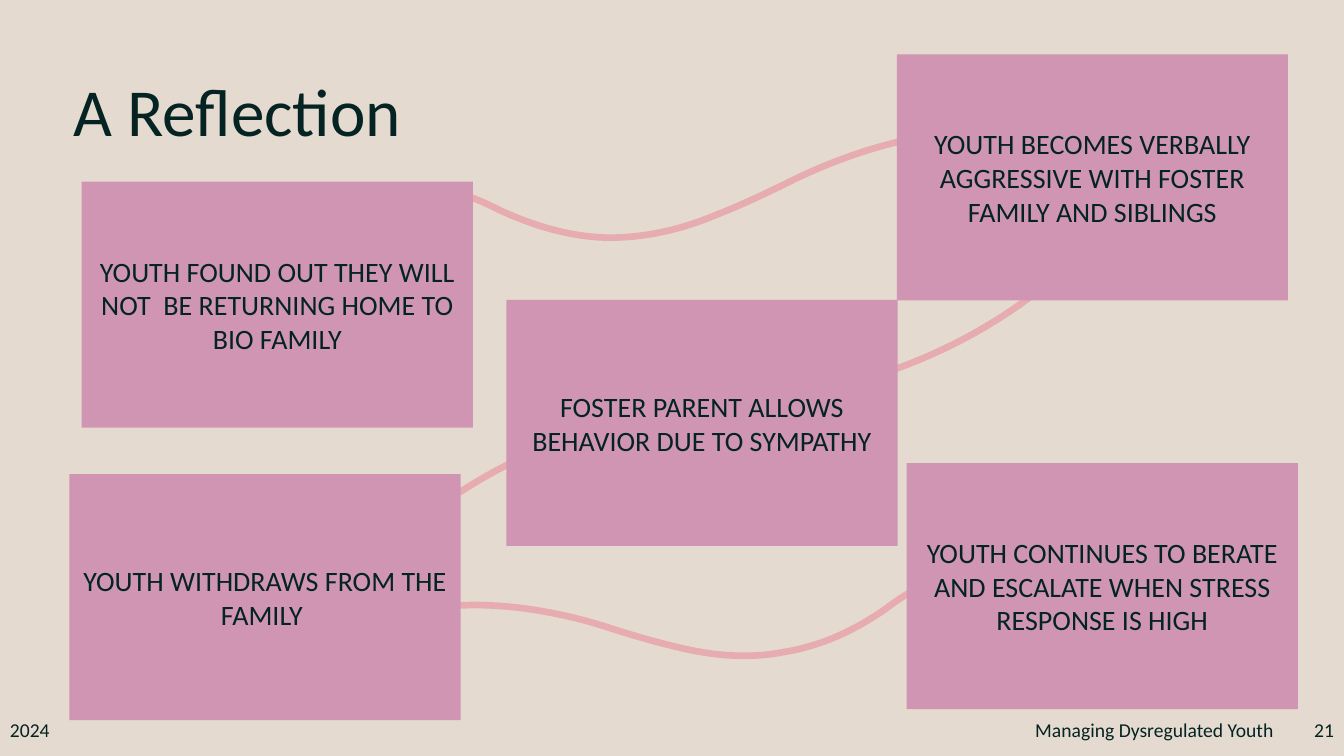
from lxml.etree import SubElement
from pptx import Presentation
from pptx.dml.color import RGBColor
from pptx.enum.shapes import MSO_SHAPE
from pptx.enum.text import MSO_ANCHOR, PP_ALIGN
from pptx.oxml.ns import qn
from pptx.util import Cm, Pt

SAND, PINK, MAUVE, INK = "E5DACF", "E7ACAF", "CF95B2", "042322"
SLIDE_WIDTH, SLIDE_HEIGHT = 33.87, 19.05
CARD_WIDTH, CARD_HEIGHT = 9.86, 6.2
FOOTER_HEIGHT = 0.86

# Left, top and text of each card, in cm
CARDS = [
    (22.6, 1.37, "YOUTH BECOMES VERBALLY AGGRESSIVE WITH FOSTER FAMILY AND SIBLINGS"),
    (2.06, 4.58, "YOUTH FOUND OUT THEY WILL NOT  BE RETURNING HOME TO BIO FAMILY"),
    (12.76, 7.56, "FOSTER PARENT ALLOWS BEHAVIOR DUE TO SYMPATHY"),
    (22.85, 11.67, "YOUTH CONTINUES TO BERATE AND ESCALATE WHEN STRESS RESPONSE IS HIGH"),
    (1.75, 11.95, "YOUTH WITHDRAWS FROM THE FAMILY "),
]

# Bezier points of each curve in cm: a start, then three points per segment
CURVES = [
    [(21.16, 9.73), (23.19, 9.22), (25.02, 8.31), (26.59, 6.99)],
    [(14.83, 10.87), (12.93, 11.48), (11.3, 12.45), (9.88, 13.69)],
    [(7.8, 5.66),
     (8.89, 4.75), (10.11, 4.5), (11.4, 4.83),
     (11.84, 4.93), (12.22, 5.11), (12.62, 5.31),
     (13.46, 5.69), (14.35, 5.97), (15.34, 5.99),
     (16.18, 5.99), (17.02, 5.82), (17.81, 5.51),
     (18.72, 5.16), (19.23, 4.9), (19.76, 4.65),
     (20.35, 4.34), (23.88, 2.62), (26.09, 3.71)],
    [(23.37, 14.71),
     (22.96, 14.88), (22.63, 15.11), (22.28, 15.37),
     (21.54, 15.88), (20.7, 16.28), (19.76, 16.43),
     (18.95, 16.59), (18.14, 16.54), (17.3, 16.36),
     (16.38, 16.15), (15.85, 15.98), (15.29, 15.8),
     (14.68, 15.6), (11.02, 14.48), (8.81, 16.15)],
]


def color(hex_string):
    return RGBColor.from_string(hex_string)


def set_attributes(target, values):
    for name, value in values.items():
        setattr(target, name, value)


def write_text(shape, text, size, alignment, line_spacing=None):
    frame = shape.text_frame
    set_attributes(frame, {"word_wrap": True, "vertical_anchor": MSO_ANCHOR.MIDDLE})
    paragraph = frame.paragraphs[0]
    set_attributes(paragraph, {"alignment": alignment, "line_spacing": line_spacing})
    run = paragraph.add_run()
    run.text = text
    set_attributes(run.font, {"name": "Calibri", "size": Pt(size)})
    run.font.color.rgb = color(INK)


def add_label(slide, left, top, width, height, text, size, alignment, line_spacing=None):
    label = slide.shapes.add_textbox(Cm(left), Cm(top), Cm(width), Cm(height))
    write_text(label, text, size, alignment, line_spacing)


def bend_lines(shape):
    """Turn every three straight segments into one cubic Bezier segment."""
    outline = next(shape.element.iter(qn("a:path")))
    lines = outline.findall(qn("a:lnTo"))
    for first in range(0, len(lines), 3):
        bezier = SubElement(outline, qn("a:cubicBezTo"))
        for line in lines[first:first + 3]:
            bezier.append(line[0])
            outline.remove(line)


def add_curve(slide, left, top, points):
    start, *others = [(Cm(left + x), Cm(top + y)) for x, y in points]
    builder = slide.shapes.build_freeform(*start)
    builder.add_line_segments(others, close=False)
    curve = builder.convert_to_shape()
    bend_lines(curve)
    curve.shadow.inherit = False
    curve.fill.background()
    curve.line.color.rgb = color(PINK)
    curve.line.width = Pt(4.75)


def add_card(slide, left, top, width, height, text):
    card = slide.shapes.add_shape(
        MSO_SHAPE.RECTANGLE, Cm(left), Cm(top), Cm(width), Cm(height))
    card.shadow.inherit = False
    card.fill.solid()
    card.fill.fore_color.rgb = color(MAUVE)
    card.line.fill.background()
    write_text(card, text, 20, PP_ALIGN.CENTER)


def add_footer(slide, left, top, width, height):
    side_width, name_width = 2.74, 9.55
    right = left + width
    parts = [
        (left, side_width, "2024", PP_ALIGN.LEFT),
        (right - name_width, name_width, "Managing Dysregulated Youth", PP_ALIGN.CENTER),
        (right - side_width, side_width, "21", PP_ALIGN.RIGHT),
    ]
    for part_left, part_width, text, alignment in parts:
        add_label(slide, part_left, top, part_width, height, text, 14, alignment)


def add_reflection_slide(presentation):
    slide = presentation.slides.add_slide(presentation.slide_layouts[6])
    slide.background.fill.solid()
    slide.background.fill.fore_color.rgb = color(SAND)

    # Curves behind the cards
    for points in CURVES:
        add_curve(slide, 0, 0, points)

    # Cards
    for left, top, text in CARDS:
        add_card(slide, left, top, CARD_WIDTH, CARD_HEIGHT, text)

    # Title and footer
    add_label(slide, 1.6, 1.96, 29.21, 1.88, "A Reflection", 48, PP_ALIGN.LEFT, 0.9)
    add_footer(slide, 0, 17.96, SLIDE_WIDTH, FOOTER_HEIGHT)


def main():
    presentation = Presentation()
    set_attributes(presentation, {
        "slide_width": Cm(SLIDE_WIDTH), "slide_height": Cm(SLIDE_HEIGHT)})
    add_reflection_slide(presentation)
    presentation.save("out.pptx")


if __name__ == "__main__":
    main()
